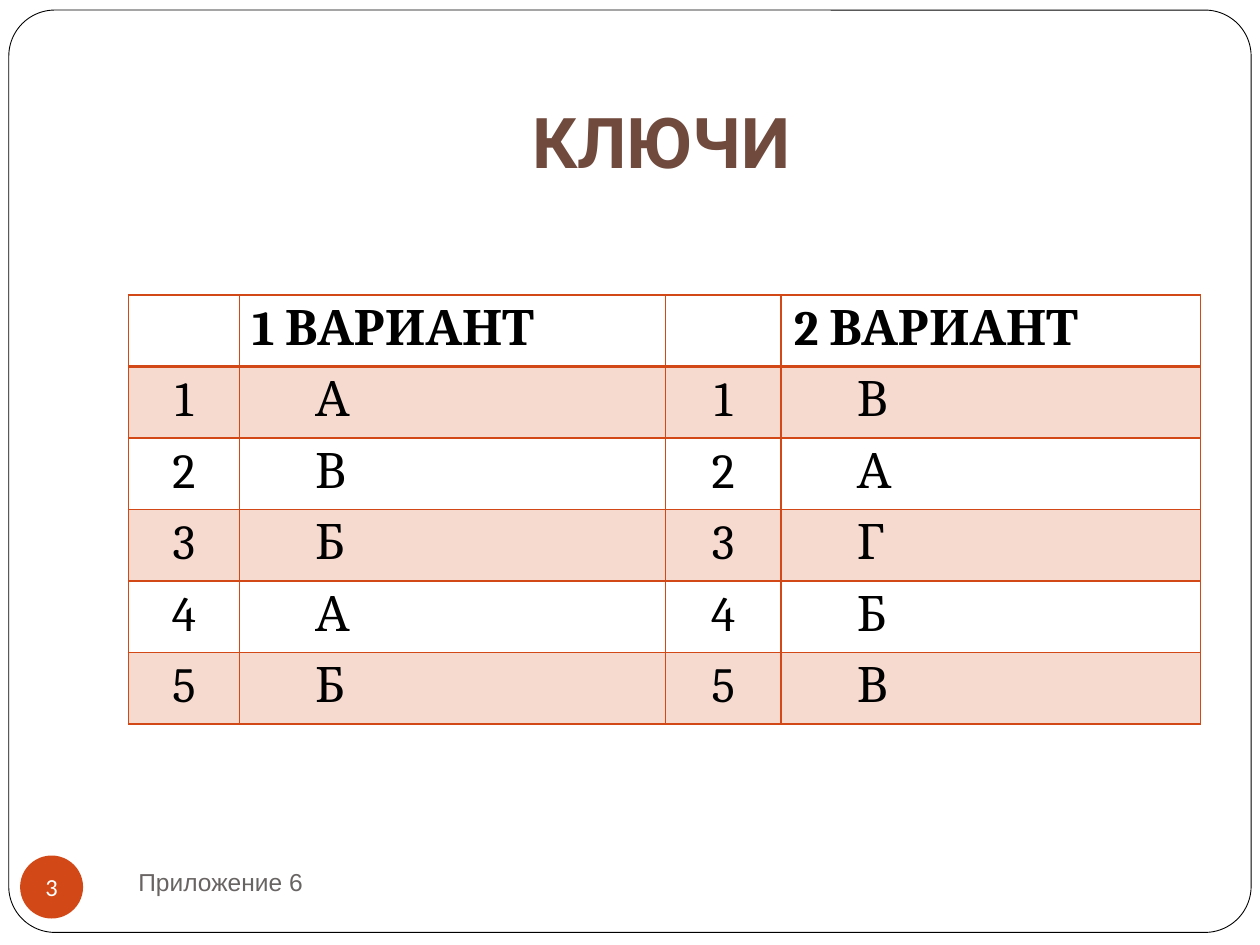
"""Build the answer key slide with a table for two test variants."""
from dataclasses import dataclass

from lxml import etree
from pptx import Presentation
from pptx.dml import color
from pptx.enum import shapes, text
from pptx.oxml import ns
from pptx.util import Inches, Pt

RUST = "D34817"
KEYS = [("А", "В"), ("В", "А"), ("Б", "Г"), ("А", "Б"), ("Б", "В")]
COLS = [0.88, 3.38, 0.92, 3.33]
LEFT, MID = text.PP_ALIGN.LEFT, text.PP_ALIGN.CENTER


@dataclass
class Style:
    font: str
    size: float
    tone: str
    bold: bool = False
    align: text.PP_ALIGN = LEFT


@dataclass
class Label:
    words: str
    box: tuple[float, float, float, float]
    anchor: text.MSO_ANCHOR
    style: Style
    foot: float = 0.05


LABELS = [
    Label("КЛЮЧИ", (1, 0.3, 8.5, 1.25), text.MSO_ANCHOR.BOTTOM,
          Style("Roboto", 40, "704A3D", True, MID), 0.1),
    Label("Приложение 6", (1, 6.75, 4.33, 0.5), text.MSO_ANCHOR.MIDDLE,
          Style("Arial", 14, "696464")),
]


def paint(tone: str) -> color.RGBColor:
    return color.RGBColor.from_string(tone)


def write(frame, words: str, style: Style) -> None:
    para = frame.paragraphs[0]
    para.text = words
    para.alignment = style.align
    font = para.font
    font.name, font.size, font.bold = style.font, Pt(style.size), style.bold
    font.color.rgb = paint(style.tone)


def add_label(slide, label: Label) -> None:
    frame = slide.shapes.add_textbox(*map(Inches, label.box)).text_frame
    frame.word_wrap = True
    frame.vertical_anchor = label.anchor
    frame.margin_bottom = Inches(label.foot)
    write(frame, label.words, label.style)


def add_shape(slide, kind: shapes.MSO_SHAPE, box: tuple, tone: str):
    shape = slide.shapes.add_shape(kind, *map(Inches, box))
    shape.shadow.inherit = False
    shape.fill.solid()
    shape.fill.fore_color.rgb = paint(tone)
    return shape


def add_edge(cell, side: str, width: float) -> None:
    line = etree.SubElement(cell._tc.get_or_add_tcPr(), ns.qn(f"a:ln{side}"), w=str(Pt(width)))
    fill = etree.SubElement(line, ns.qn("a:solidFill"))
    etree.SubElement(fill, ns.qn("a:srgbClr"), val=RUST)


def tint(cell) -> None:
    cell.fill.solid()
    cell.fill.fore_color.rgb = paint(RUST)
    tone = cell._tc.tcPr.find(f".//{ns.qn('a:srgbClr')}[last()]/../../{ns.qn('a:solidFill')}")
    for tone in cell._tc.tcPr.findall(ns.qn("a:solidFill")):
        etree.SubElement(tone[0], ns.qn("a:alpha"), val="20000")


def fill_cell(cell, words: str, row: int, col: int) -> None:
    for side in "LRTB":
        thick = (row, side) in ((0, "B"), (1, "T"))
        add_edge(cell, side, 2 if thick else 1)
    if row % 2:
        tint(cell)
    else:
        cell.fill.background()
    align = LEFT if col % 2 else MID
    if row and col % 2:
        props = cell.text_frame.paragraphs[0]._p.get_or_add_pPr()
        props.set("marL", str(Inches(0.5)))
        props.set("indent", "0")
    write(cell.text_frame, words, Style("Cambria", 28, "000000", row == 0, align))


def add_keys(slide) -> None:
    rows = [("", "1 ВАРИАНТ", "", "2 ВАРИАНТ")]
    rows += [(str(num), one, str(num), two) for num, (one, two) in enumerate(KEYS, 1)]
    box = map(Inches, (1.02, 2.34, sum(COLS), 3.4))
    table = slide.shapes.add_table(len(rows), len(COLS), *box).table
    table.first_row = table.horz_banding = False
    for col, width in zip(table.columns, COLS):
        col.width = Inches(width)
    for r, row in enumerate(rows):
        for c, words in enumerate(row):
            fill_cell(table.cell(r, c), words, r, c)


def add_badge(slide) -> None:
    badge = add_shape(slide, shapes.MSO_SHAPE.OVAL, (0.16, 6.79, 0.5, 0.5), RUST)
    badge.line.fill.background()
    frame = badge.text_frame
    frame.margin_left = frame.margin_right = frame.margin_top = frame.margin_bottom = 0
    frame.word_wrap = False
    frame.vertical_anchor = text.MSO_ANCHOR.MIDDLE
    write(frame, "3", Style("Calibri", 14, "FFFFFF", align=MID))


def main() -> None:
    deck = Presentation()
    deck.slide_width, deck.slide_height = Inches(10), Inches(7.5)
    slide = deck.slides.add_slide(deck.slide_layouts[6])
    frame = add_shape(slide, shapes.MSO_SHAPE.ROUNDED_RECTANGLE, (0.07, 0.08, 9.86, 7.32), "FFFFFF")
    frame.adjustments[0] = 0.05
    frame.line.color.rgb = paint("000000")
    frame.line.width = Pt(0.5)
    for label in LABELS:
        add_label(slide, label)
    add_keys(slide)
    add_badge(slide)
    deck.save("out.pptx")


if __name__ == "__main__":
    main()
